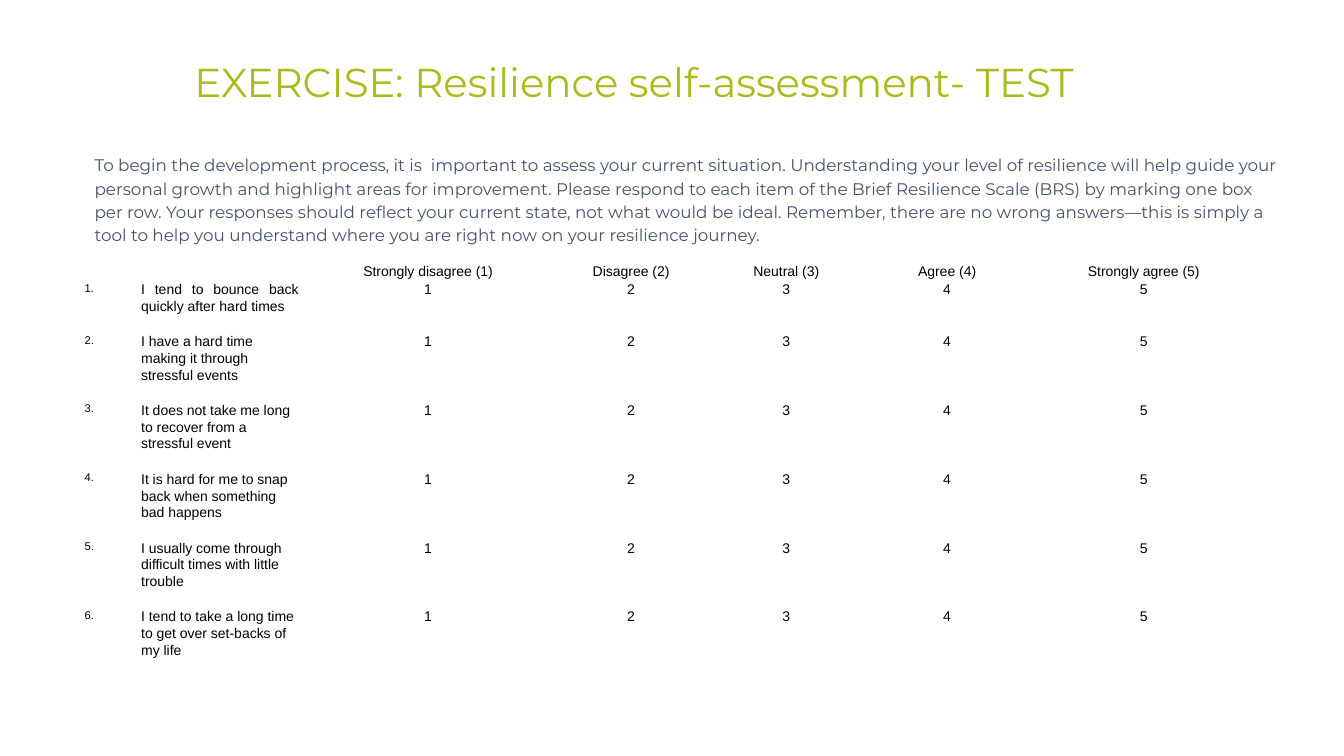
from dataclasses import dataclass

from lxml import etree
from pptx import Presentation
from pptx.dml.color import RGBColor
from pptx.enum import text as txt
from pptx.oxml import ns
from pptx.util import Emu, Inches, Pt

SLIDE_W, SLIDE_H = Inches(13.33), Inches(7.5)
LEFT, CENTER, JUSTIFY = txt.PP_ALIGN.LEFT, txt.PP_ALIGN.CENTER, txt.PP_ALIGN.JUSTIFY


@dataclass(frozen=True)
class Style:
    size: float
    color: str = "000000"
    font: str = "Arial"
    spacing: float = 1.07
    align: txt.PP_ALIGN = LEFT


@dataclass(frozen=True)
class Block:
    words: str
    box: tuple  # left, top, width, height in percent of the slide
    style: Style
    anchor: txt.MSO_ANCHOR


# Wording
TITLE = Block(
    "EXERCISE: Resilience self-assessment- TEST",
    (13.73, 7.33, 83.12, 7.6),
    Style(28.8, "AABB1D", "Montserrat", 0.9),
    txt.MSO_ANCHOR.MIDDLE,
)
INTRO = Block(
    "To begin the development process, it is  important to assess your current situation. "
    "Understanding your level of resilience will help guide your personal growth and highlight "
    "areas for improvement. Please respond to each item of the Brief Resilience Scale (BRS) by "
    "marking one box per row. Your responses should reflect your current state, not what would "
    "be ideal. Remember, there are no wrong answers—this is simply a tool to help you understand "
    "where you are right now on your resilience journey.",
    (6.3, 19.47, 89.8, 10.67),
    Style(12, "44546A", "Montserrat", 1.15),
    txt.MSO_ANCHOR.TOP,
)
ANSWERS = ["Strongly disagree", "Disagree", "Neutral", "Agree", "Strongly agree"]
STATEMENTS = [
    "I tend to bounce back quickly after hard times",
    "I have a hard time making it through stressful events",
    "It does not take me long to recover from a stressful event",
    "It is hard for me to snap back when something bad happens",
    "I usually come through difficult times with little trouble",
    "I tend to take a long time to get over set-backs of my life",
]

# Table grid, in percent of the slide
SCALE_LEFT, SCALE_TOP = 5.78, 34.8
COLUMNS = [4.2, 12.75, 18.23, 12, 11.1, 12.83, 16.43]
ROWS = [2.2, 6.88] + [9.1] * 5

NUMBER = Style(8)
STATEMENT = Style(10)
FIRST_STATEMENT = Style(10, align=JUSTIFY)
SCORE = Style(10, align=CENTER)


def across(percent: float) -> Emu:
    return Emu(round(SLIDE_W * percent / 100))


def down(percent: float) -> Emu:
    return Emu(round(SLIDE_H * percent / 100))


def rgb(color: str) -> RGBColor:
    return RGBColor.from_string(color)


def write(frame, words: str, style: Style) -> None:
    line = frame.paragraphs[0]
    line.alignment = style.align
    line.line_spacing = style.spacing
    if not words:  # keeps an empty cell as low as its row
        end = etree.SubElement(line._p, ns.qn("a:endParaRPr"))
        end.set("sz", str(round(style.size * 100)))
        return
    run = line.add_run()
    run.text = words
    for name, value in {"size": Pt(style.size), "name": style.font, "bold": False}.items():
        setattr(run.font, name, value)
    run.font.color.rgb = rgb(style.color)


def add_block(slide, block: Block) -> None:
    left, top, width, height = block.box
    frame = slide.shapes.add_textbox(
        across(left), down(top), across(width), down(height)
    ).text_frame
    frame.word_wrap = True
    frame.vertical_anchor = block.anchor
    write(frame, block.words, block.style)


def add_scale(slide) -> None:
    scale = slide.shapes.add_table(
        len(ROWS), len(COLUMNS), across(SCALE_LEFT), down(SCALE_TOP),
        across(sum(COLUMNS)), down(sum(ROWS)),
    ).table
    scale.first_row = scale.horz_banding = False
    for column, width in zip(scale.columns, COLUMNS):
        column.width = across(width)
    for row, height in zip(scale.rows, ROWS):
        row.height = down(height)

    # Header, then one row for each statement
    scores = range(1, len(ANSWERS) + 1)
    lines = [["", ""] + [f"{answer} ({score})" for score, answer in zip(scores, ANSWERS)]]
    for number, statement in enumerate(STATEMENTS, 1):
        lines.append([f"{number}.", statement] + [str(score) for score in scores])

    margins = {"margin_left": Inches(0.07), "margin_right": Inches(0.07),
               "margin_top": 0, "margin_bottom": 0}
    for r, line in enumerate(lines):
        styles = [NUMBER, FIRST_STATEMENT if r == 1 else STATEMENT] + [SCORE] * len(ANSWERS)
        for c, (words, style) in enumerate(zip(line, styles)):
            cell = scale.cell(r, c)
            cell.fill.background()
            for name, value in margins.items():
                setattr(cell, name, value)
            write(cell.text_frame, words, style)


def main() -> None:
    deck = Presentation()
    deck.slide_width, deck.slide_height = SLIDE_W, SLIDE_H
    slide = deck.slides.add_slide(deck.slide_layouts[6])
    for block in (INTRO, TITLE):
        add_block(slide, block)
    add_scale(slide)
    deck.save("out.pptx")


if __name__ == "__main__":
    main()
